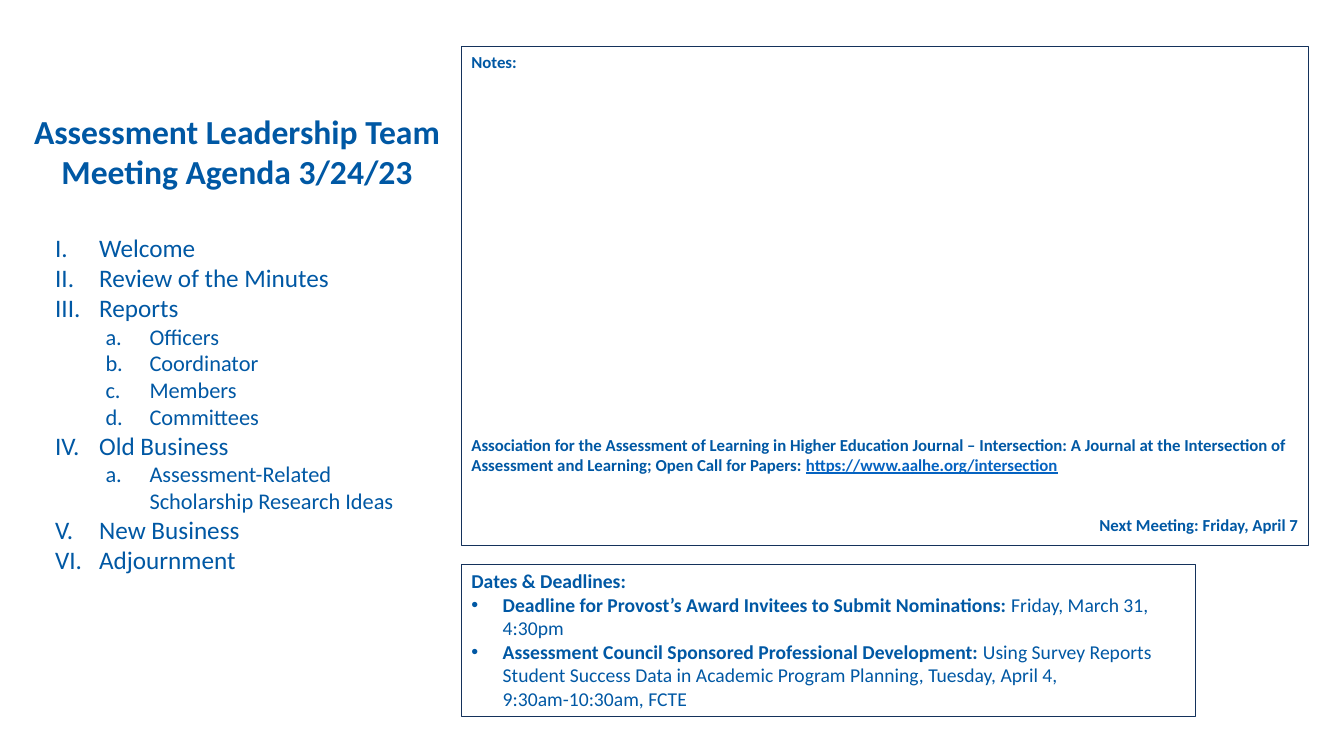
from lxml import etree
from pptx import Presentation
from pptx.dml.color import RGBColor
from pptx.enum.shapes import MSO_SHAPE
from pptx.enum.text import MSO_ANCHOR, MSO_AUTO_SIZE, PP_ALIGN
from pptx.oxml.ns import qn
from pptx.util import Cm, Pt

RECT = MSO_SHAPE.RECTANGLE
TOP = MSO_ANCHOR.TOP
GROW = MSO_AUTO_SIZE.SHAPE_TO_FIT_TEXT
LEFT, CENTER, RIGHT = PP_ALIGN.LEFT, PP_ALIGN.CENTER, PP_ALIGN.RIGHT
BLUE = RGBColor(0x00, 0x58, 0xA4)
NAVY = RGBColor(0x14, 0x32, 0x5B)
LINK = RGBColor(0x05, 0x63, 0xC1)
FONT = "Calibri"
LINE_HEIGHT = 1.2

TITLE = ["Assessment Leadership Team", "Meeting Agenda 3/24/23"]
AGENDA = [
    ("Welcome", []),
    ("Review of the Minutes", []),
    ("Reports", ["Officers", "Coordinator", "Members", "Committees"]),
    ("Old Business", ["Assessment-Related Scholarship Research Ideas"]),
    ("New Business", []),
    ("Adjournment", []),
]
CALL = ("Association for the Assessment of Learning in Higher Education Journal – "
        "Intersection: A Journal at the Intersection of Assessment and Learning; "
        "Open Call for Papers: ")
CALL_URL = "https://www.aalhe.org/intersection"
NEXT_MEETING = "Next Meeting: Friday, April 7"
DEADLINES = [
    ("Deadline for Provost’s Award Invitees to Submit Nominations: ",
     "Friday, March 31, 4:30pm"),
    ("Assessment Council Sponsored Professional Development: ",
     "Using Survey Reports Student Success Data in Academic Program Planning, "
     "Tuesday, April 4, 9:30am-10:30am, FCTE"),
]

prs = Presentation()
prs.slide_width, prs.slide_height = Cm(33.87), Cm(19.05)
s = prs.slides.add_slide(prs.slide_layouts[6])


def add_box(left, top, width, height, framed=False):
    place = Cm(left), Cm(top), Cm(width), Cm(height)
    if framed:
        sp = s.shapes.add_shape(RECT, *place)
        sp.shadow.inherit = False
        sp.fill.background()
        sp.line.color.rgb = NAVY
        sp.line.width = Pt(0.75)
    else:
        sp = s.shapes.add_textbox(*place)
    tf = sp.text_frame
    tf.word_wrap = True
    tf.vertical_anchor = TOP
    tf.auto_size = GROW
    return tf


def add_paragraph(tf, align=LEFT, skipped=0, size=12):
    p = tf.paragraphs[0]
    if p.runs:
        p = tf.add_paragraph()
    p.alignment = align
    if skipped:
        p.space_before = Pt(round(skipped * size * LINE_HEIGHT, 1))
    return p


def add_run(p, text, size, bold=False, color=BLUE, underline=None):
    r = p.add_run()
    r.text = text
    r.font.name = FONT
    r.font.size = Pt(size)
    r.font.bold = bold
    r.font.color.rgb = color
    r.font.underline = underline


def add_marker(p, margin, hang, number=None):
    pPr = p._p.get_or_add_pPr()
    pPr.set("marL", str(Cm(margin)))
    pPr.set("indent", str(-Cm(hang)))
    if number:
        etree.SubElement(pPr, qn("a:buFont")).set("typeface", "+mj-lt")
        etree.SubElement(pPr, qn("a:buAutoNum")).set("type", number)
    else:
        etree.SubElement(pPr, qn("a:buFont")).set("typeface", "Arial")
        etree.SubElement(pPr, qn("a:buChar")).set("char", "•")


tf = add_box(1.14, 5.72, 10.13, 8.97)
for item, subitems in AGENDA:
    p = add_paragraph(tf)
    add_marker(p, 1.11, 1.11, "romanUcPeriod")
    add_run(p, item, 18)
    for subitem in subitems:
        p = add_paragraph(tf)
        p.level = 1
        add_marker(p, 2.38, 1.11, "alphaLcPeriod")
        add_run(p, subitem, 16)

tf = add_box(-0.3, 2.67, 12.55, 2.31)
for line in TITLE:
    add_run(add_paragraph(tf, CENTER), line, 24, True)

tf = add_box(11.63, 1.17, 21.34, 12.57, framed=True)
add_run(add_paragraph(tf), "Notes:", 12, True)
p = add_paragraph(tf, skipped=18)
add_run(p, CALL, 12, True)
add_run(p, CALL_URL, 12, True, LINK, True)
add_run(add_paragraph(tf, RIGHT, skipped=2), NEXT_MEETING, 12, True)

tf = add_box(11.63, 14.22, 18.49, 3.84, framed=True)
add_run(add_paragraph(tf), "Dates & Deadlines:", 14, True)
for label, detail in DEADLINES:
    p = add_paragraph(tf)
    add_marker(p, 0.79, 0.79)
    add_run(p, label, 14, True)
    add_run(p, detail, 14)

prs.save("out.pptx")
